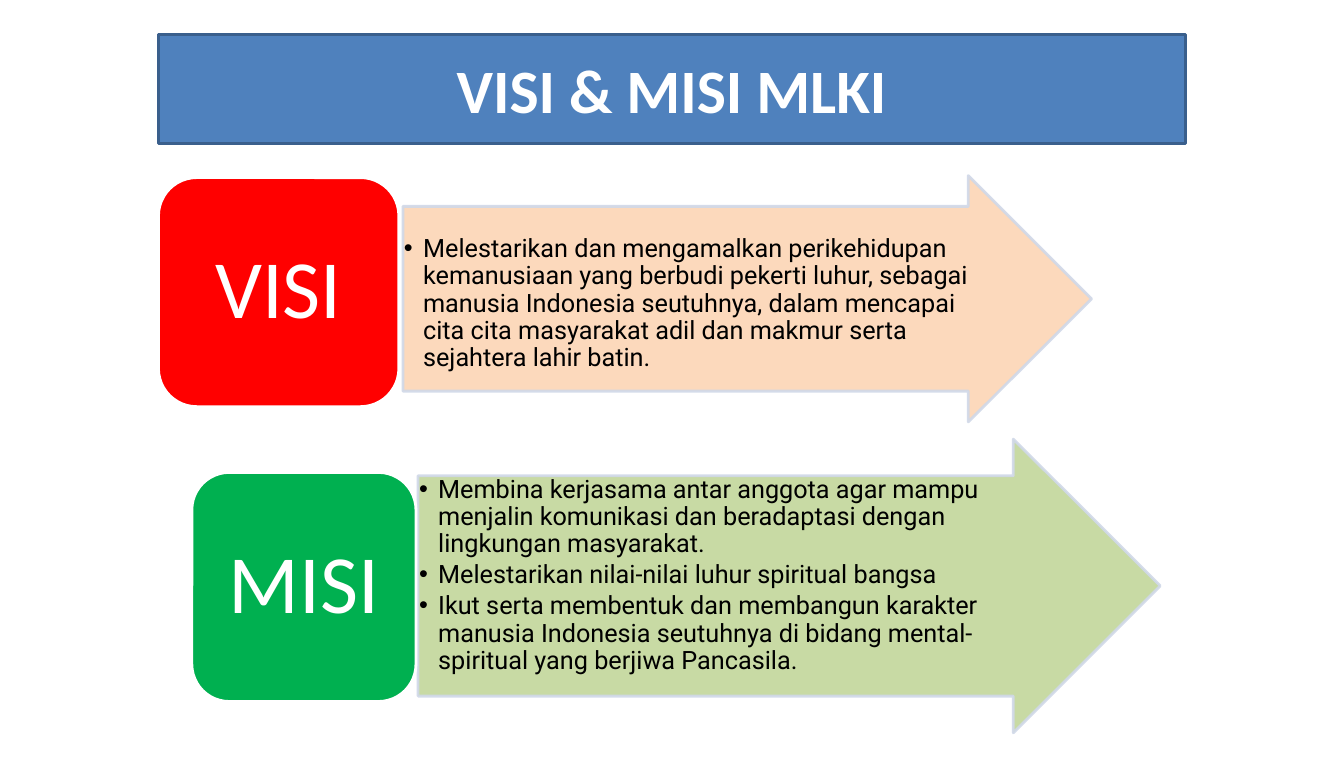
import pptx
import pptx.util
import pptx.dml.color
import pptx.enum.shapes
import pptx.enum.text
import pptx.oxml.ns
import lxml.etree
from dataclasses import dataclass

Pt = pptx.util.Pt
RGB = pptx.dml.color.RGBColor.from_string
SHAPE = pptx.enum.shapes.MSO_SHAPE
ALIGN = pptx.enum.text.PP_ALIGN
ANCHOR = pptx.enum.text.MSO_ANCHOR
qn = pptx.oxml.ns.qn


@dataclass(frozen=True)
class Theme:
    white: str = "FFFFFF"
    black: str = "000000"
    blue: str = "4F81BD"
    blue_edge: str = "3A5F8C"
    red: str = "FF0000"
    green: str = "00B050"
    peach: str = "FCD5B5"
    sage: str = "C3D69B"
    arrow_edge: str = "D0D8E8"
    head_font: str = "Calibri"
    body_font: str = "Roboto"
    title_size: int = 44
    card_size: int = 59
    body_size: int = 18
    line_width: int = 2
    bullet_indent: float = 13.7


class Deck:
    def __init__(self, theme, width, height):
        self.theme = theme
        self.prs = pptx.Presentation()
        self.prs.slide_width, self.prs.slide_height = Pt(width), Pt(height)
        self.slide = self.prs.slides.add_slide(self.prs.slide_layouts[6])

    def shape(self, kind, box, fill, edge, opacity=100):
        sp = self.slide.shapes.add_shape(kind, *map(Pt, box))
        sp.shadow.inherit = False
        sp.fill.solid()
        sp.fill.fore_color.rgb = RGB(fill)
        sp.line.color.rgb = RGB(edge)
        sp.line.width = Pt(self.theme.line_width)
        if opacity < 100:
            for color in sp._element.spPr.iter(qn("a:srgbClr")):
                lxml.etree.SubElement(color, qn("a:alpha"), val=str(opacity * 1000))
        return sp

    def text(self, sp, paragraphs, font, para, anchor, inset=0):
        tf = sp.text_frame
        frame = dict(word_wrap=True, vertical_anchor=anchor, margin_left=Pt(inset),
                     margin_right=Pt(inset), margin_top=Pt(inset), margin_bottom=Pt(inset))
        self.apply(tf, frame)
        for i, line in enumerate(paragraphs):
            p = tf.add_paragraph() if i else tf.paragraphs[0]
            self.apply(p, para)
            r = p.add_run()
            r.text = line
            color = font["color"]
            self.apply(r.font, {k: v for k, v in font.items() if k != "color"})
            r.font.color.rgb = RGB(color)
        return tf

    @staticmethod
    def apply(target, values):
        for name, value in values.items():
            setattr(target, name, value)

    def label(self, kind, box, text, fill, edge, size, bold=False):
        sp = self.shape(kind, box, fill, edge)
        font = dict(name=self.theme.head_font, size=Pt(size), bold=bold, color=self.theme.white)
        para = dict(alignment=ALIGN.CENTER, line_spacing=0.9 if not bold else 1.0)
        self.text(sp, [text], font, para, ANCHOR.MIDDLE)

    def arrow(self, box, fill):
        sp = self.shape(SHAPE.RIGHT_ARROW, box, fill, self.theme.arrow_edge, opacity=90)
        sp.adjustments[0], sp.adjustments[1] = 0.75, 0.5

    def bullets(self, box, lines):
        t = self.theme
        sp = self.slide.shapes.add_textbox(*map(Pt, box))
        font = dict(name=t.body_font, size=Pt(t.body_size), color=t.black)
        para = dict(alignment=ALIGN.LEFT, line_spacing=0.9, space_after=Pt(2.7))
        tf = self.text(sp, lines, font, para, ANCHOR.TOP, inset=0.7)
        for p in tf.paragraphs:
            pPr = p._p.get_or_add_pPr()
            pPr.set("marL", str(Pt(t.bullet_indent)))
            pPr.set("indent", str(-Pt(t.bullet_indent)))
            lxml.etree.SubElement(pPr, qn("a:buFont"), typeface="Arial")
            lxml.etree.SubElement(pPr, qn("a:buChar"), char="•")


def main():
    t = Theme()
    deck = Deck(t, 958.3, 541.4)

    # Vision and mission rows: arrow, its bullets, then the card
    rows = [
        dict(name="VISI", card=(113, 126.7, 171.4, 163.4), color=t.red,
             arrow=(287.3, 125.3, 491, 175.7), tint=t.peach,
             body=(287.3, 167.4, 425.5, 112),
             lines=["Melestarikan dan mengamalkan perikehidupan kemanusiaan yang berbudi "
                    "pekerti luhur, sebagai manusia Indonesia seutuhnya, dalam mencapai "
                    "cita cita masyarakat adil dan makmur serta sejahtera lahir batin."]),
        dict(name="MISI", card=(136.8, 337, 159.8, 163.4), color=t.green,
             arrow=(298.1, 313.2, 529.2, 209.5), tint=t.sage,
             body=(298.1, 339.1, 446, 157),
             lines=["Membina kerjasama antar anggota agar mampu menjalin komunikasi dan "
                    "beradaptasi dengan lingkungan masyarakat.",
                    "Melestarikan nilai-nilai luhur spiritual bangsa",
                    "Ikut serta membentuk dan membangun karakter manusia Indonesia "
                    "seutuhnya di bidang mental-spiritual yang berjiwa Pancasila."]),
    ]
    for row in rows:
        deck.arrow(row["arrow"], row["tint"])
        deck.bullets(row["body"], row["lines"])
        deck.label(SHAPE.ROUNDED_RECTANGLE, row["card"], row["name"], row["color"],
                   t.white, t.card_size)

    # Title banner
    deck.label(SHAPE.RECTANGLE, (113, 24.5, 732.2, 77.8), "VISI & MISI MLKI",
               t.blue, t.blue_edge, t.title_size, bold=True)

    deck.prs.save("out.pptx")


if __name__ == "__main__":
    main()
